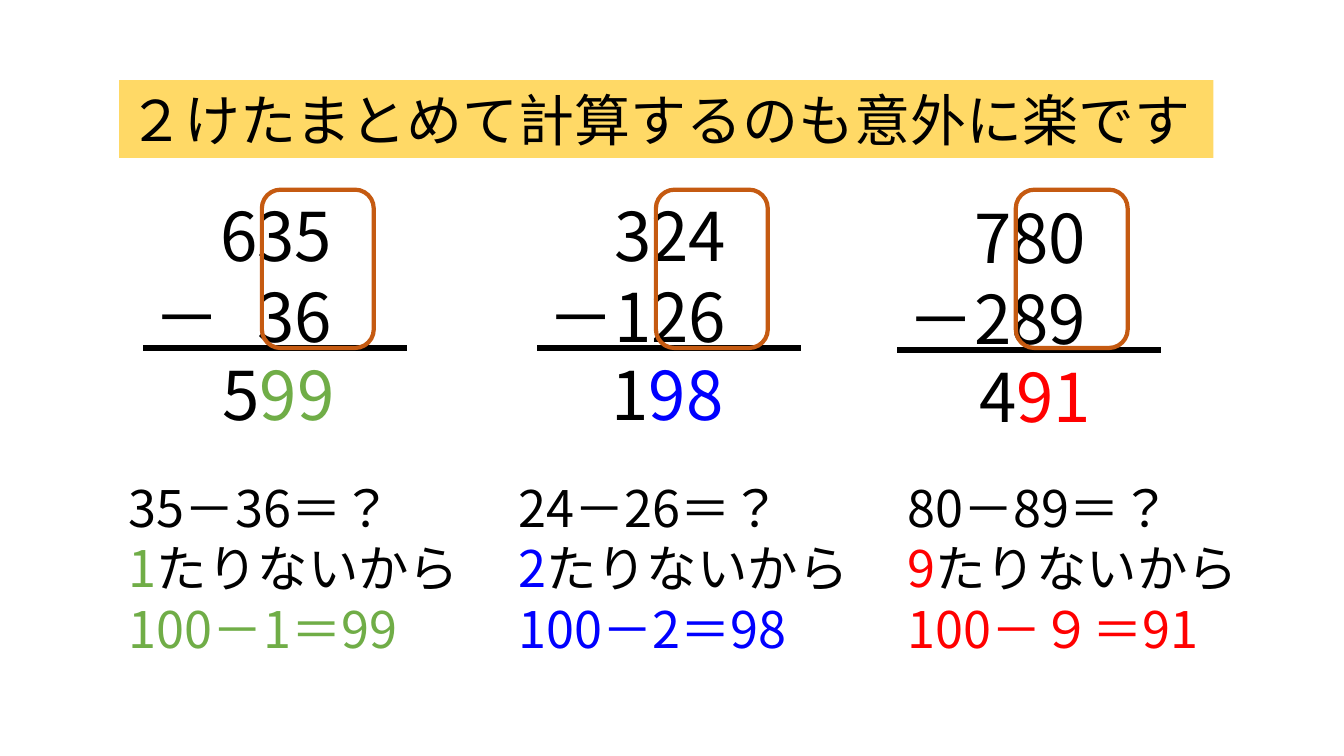
from lxml import etree
from pptx import Presentation
from pptx.dml.color import RGBColor
from pptx.enum.shapes import MSO_CONNECTOR, MSO_SHAPE
from pptx.enum.text import MSO_ANCHOR, PP_ALIGN
from pptx.oxml.ns import qn
from pptx.util import Cm, Pt

RECT, ROUND = MSO_SHAPE.RECTANGLE, MSO_SHAPE.ROUNDED_RECTANGLE
LINE, TOP, LEFT = MSO_CONNECTOR.STRAIGHT, MSO_ANCHOR.TOP, PP_ALIGN.LEFT
FONT = "Noto Sans CJK JP"
BLACK = RGBColor(0, 0, 0)
GOLD = RGBColor(0xFF, 0xD9, 0x66)
RUST = RGBColor(0xC5, 0x5A, 0x11)
GREEN = RGBColor(0x70, 0xAD, 0x47)
BLUE = RGBColor(0, 0, 255)
RED = RGBColor(255, 0, 0)

# Content: "gap" is the number of empty digit places after the minus sign
TITLE = "２けたまとめて計算するのも意外に楽です"
MINUS = "－"
SUMS = [
    {"color": GREEN, "x": 3.61, "drop": 0, "ans_x": 5.36,
     "top": "　635", "sub": "36", "gap": 1,
     "ans": ("5", "99"), "ask": "35－36＝？", "short": "1", "calc": "100－1＝99"},
    {"color": BLUE, "x": 13.54, "drop": 0, "ans_x": 15.16,
     "top": "　324", "sub": "126", "gap": 0,
     "ans": ("1", "98"), "ask": "24－26＝？", "short": "2", "calc": "100－2＝98"},
    {"color": RED, "x": 22.61, "drop": 0.05, "ans_x": 24.43,
     "top": "　780", "sub": "289", "gap": 0,
     "ans": ("4", "91"), "ask": "80－89＝？", "short": "9", "calc": "100－９＝91"},
]
LACK = "たりないから"

# Layout in centimetres
MARGIN, STEP = 3.0, 9.81
SUM_Y, SUM_W, SUM_H = 4.78, 6.64, 4.37
RULE_Y, ANS_W, ANS_H = 8.77, 4.4, 2.31
NOTE_Y, NOTE_W, NOTE_H = 11.89, 9.1, 4.88
RING_DX, RING_W, RING_H = 2.99, 2.82, 3.99
DIGIT = 0.555  # digit width as a share of the text size

prs = Presentation()
prs.slide_width, prs.slide_height = Cm(33.87), Cm(19.05)
slide = prs.slides.add_slide(prs.slide_layouts[6])
shapes = slide.shapes


def write(shape, lines, size):
    """Each line is a list of runs: text, colour and optional digit gap."""
    frame = shape.text_frame
    frame.word_wrap = True
    frame.vertical_anchor = TOP
    for i, line in enumerate(lines):
        para = frame.add_paragraph() if i else frame.paragraphs[0]
        para.alignment = LEFT
        para.line_spacing = Pt(size * 1.2)
        for text, color, *gap in line:
            run = para.add_run()
            run.text = text
            font = run.font
            font.name, font.size = FONT, Pt(size)
            font.color.rgb = color
            props = run._r.get_or_add_rPr()
            etree.SubElement(props, qn("a:ea")).set("typeface", FONT)
            if any(gap):
                props.set("spc", str(round(gap[0] * DIGIT * size * 100)))


def add_text(x, y, w, h, lines, size):
    write(shapes.add_textbox(Cm(x), Cm(y), Cm(w), Cm(h)), lines, size)


# Title band
band = shapes.add_shape(RECT, Cm(MARGIN), Cm(2.02), Cm(27.58), Cm(1.96))
band.shadow.inherit = False
band.fill.solid()
band.fill.fore_color.rgb = GOLD
band.line.fill.background()
write(band, [[(TITLE, BLACK)]], 40)

for i, item in enumerate(SUMS):
    x, drop, color = item["x"], item["drop"], item["color"]
    rule_y = RULE_Y + drop

    # Written subtraction
    add_text(x, SUM_Y + drop, SUM_W, SUM_H,
             [[(item["top"], BLACK)],
              [(MINUS, BLACK, item["gap"]), (item["sub"], BLACK)]], 48)
    rule = shapes.add_connector(LINE, Cm(x), Cm(rule_y),
                                Cm(x + SUM_W), Cm(rule_y))
    rule.line.color.rgb = BLACK
    rule.line.width = Pt(4.5)
    etree.SubElement(rule._element.spPr, qn("a:effectLst"))
    head, tail = item["ans"]
    add_text(item["ans_x"], rule_y, ANS_W, ANS_H,
             [[(head, BLACK), (tail, color)]], 48)

    # Explanation
    add_text(MARGIN + i * STEP, NOTE_Y, NOTE_W, NOTE_H,
             [[(item["ask"], BLACK)],
              [(item["short"], color), (LACK, BLACK)],
              [(item["calc"], color)]], 36)

    # Ring around the last two digits
    ring = shapes.add_shape(ROUND, Cm(x + RING_DX), Cm(SUM_Y),
                            Cm(RING_W), Cm(RING_H))
    ring.shadow.inherit = False
    ring.fill.background()
    ring.line.color.rgb = RUST
    ring.line.width = Pt(3)

prs.save("out.pptx")
